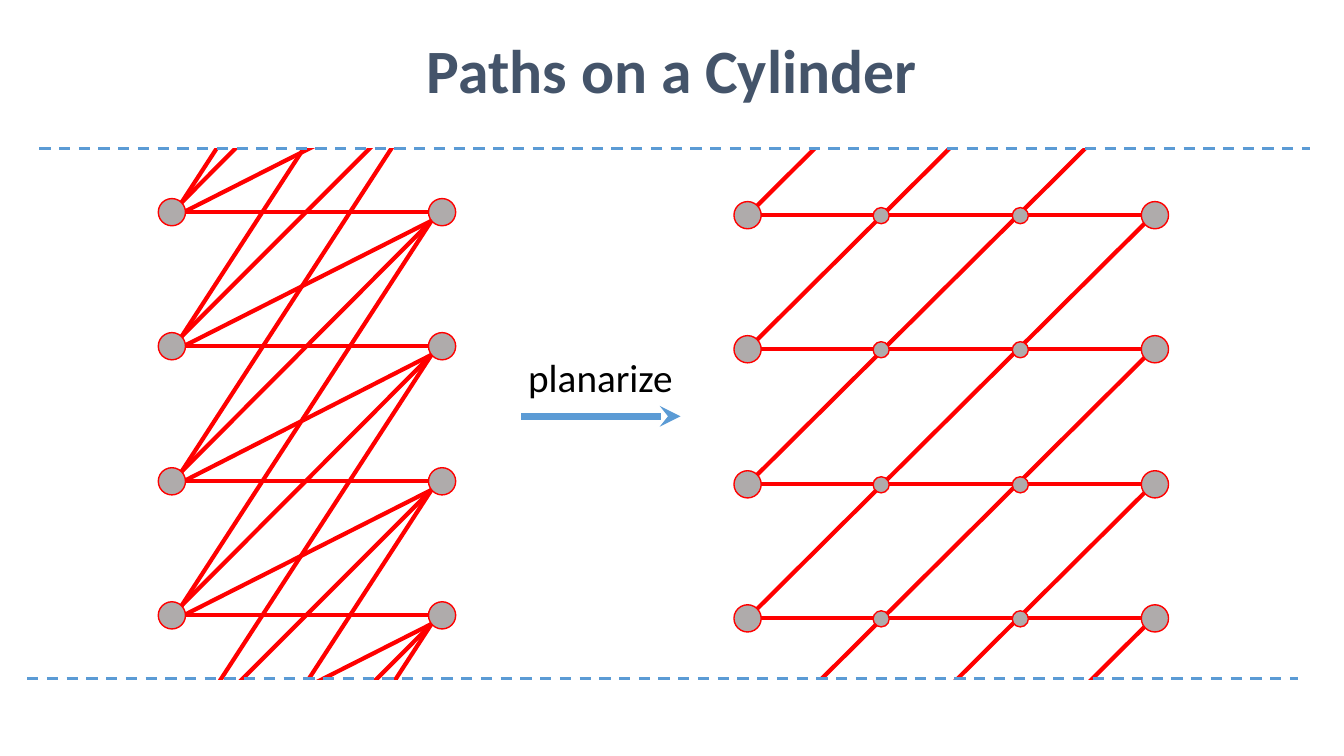
from lxml import etree
from pptx import Presentation
from pptx.dml.color import RGBColor
from pptx.enum.dml import MSO_LINE
from pptx.enum.shapes import MSO_CONNECTOR as CONNECTOR, MSO_SHAPE as SHAPE
from pptx.enum.text import MSO_ANCHOR as ANCHOR, PP_ALIGN as ALIGN
from pptx.oxml.ns import qn
from pptx.util import Emu, Pt

FONT = "Calibri"
RED, GRAY, BLUE, NAVY = "FF0000", "AFABAB", "5B9BD5", "44546A"
WHITE, BLACK = "FFFFFF", "000000"
ROWS = 4
NODE, CROSSING = 27, 16
INSET = 10


def px(length):
    """Turn px, 100 to the inch, into EMU."""
    return Emu(length * 9144)


def color(hex_string):
    return RGBColor.from_string(hex_string)


def add_line(shapes, start, end, line_color, width):
    line = shapes.add_connector(CONNECTOR.STRAIGHT, *map(px, (*start, *end)))
    line.line.color.rgb = color(line_color)
    line.line.width = Pt(width)
    etree.SubElement(line._element.spPr, qn("a:effectLst"))
    return line


def add_filled(shapes, kind, box, fill, outline):
    shape = shapes.add_shape(kind, *map(px, box))
    shape.shadow.inherit = False
    shape.fill.solid()
    shape.fill.fore_color.rgb = color(fill)
    shape.line.color.rgb = color(outline)
    shape.line.width = Pt(1)


def add_node(shapes, x, y, size):
    box = (x - size // 2, y - size // 2, size, size)
    add_filled(shapes, SHAPE.OVAL, box, GRAY, RED)


def add_text(slide, box, text, size, text_color, bold=False, wrap=True):
    frame = slide.shapes.add_textbox(*map(px, box)).text_frame
    frame.word_wrap = wrap
    paragraph = frame.paragraphs[0]
    run = paragraph.add_run()
    run.text = text
    run.font.name = FONT
    run.font.size = Pt(size)
    run.font.bold = bold
    run.font.color.rgb = color(text_color)
    return frame, paragraph


def add_graph(slide, box, steps, crossings=()):
    """Join two columns of nodes; each edge climbs a number of rows and wraps round."""
    left, top, width, height = box
    right = left + width
    shapes = slide.shapes.add_group_shape().shapes

    def row_y(row):
        return top + round(row * height / (ROWS - 1))

    for step in steps:
        # Rows below the last one stand for edges that wrap round the cylinder.
        for row in range(ROWS + step):
            start_y, end_y = row_y(row), row_y(row - step)
            if step == 0:
                start, end = (left, start_y), (right, end_y)
            elif step == 1:
                start, end = (left + NODE // 2, start_y), (right - INSET, end_y + 9)
            else:
                start, end = (left + INSET, start_y - 9), (right - INSET, end_y + 9)
            add_line(shapes, start, end, RED, 3)

    for row in range(ROWS):
        for x in (left, right):
            add_node(shapes, x, row_y(row), NODE)
        for offset in crossings:
            add_node(shapes, left + offset, row_y(row) + 1, CROSSING)


def add_cylinder_edges(slide):
    """Cover the edges beyond the cylinder and draw its two dashed borders."""
    for box in ((15, -50, 1331, 196), (0, 675, 1331, 201)):
        add_filled(slide.shapes, SHAPE.RECTANGLE, box, WHITE, WHITE)
    for x, y in ((27, 673), (39, 147)):
        border = add_line(slide.shapes, (x, y), (x + 1260, y), BLUE, 2)
        border.line.dash_style = MSO_LINE.DASH


def add_title(slide, box):
    frame, paragraph = add_text(slide, box, "Paths on a Cylinder", 44, NAVY, bold=True)
    frame.vertical_anchor = ANCHOR.MIDDLE
    paragraph.alignment = ALIGN.CENTER
    paragraph.line_spacing = 0.9


def add_planarize_arrow(slide, box):
    left, top, width, height = box
    y = top + height + 10
    arrow = add_line(slide.shapes, (left + 3, y), (left + width - 4, y), BLUE, 5)
    etree.SubElement(arrow.line._get_or_add_ln(), qn("a:tailEnd"), type="stealth")
    add_text(slide, box, "planarize", 28, BLACK, wrap=False)


def main():
    presentation = Presentation()
    presentation.slide_width, presentation.slide_height = px(1333), px(750)
    slide = presentation.slides.add_slide(presentation.slide_layouts[6])
    add_graph(slide, (741, 213, 404, 400), steps=(0, 3), crossings=(133, 271))
    add_graph(slide, (170, 210, 268, 400), steps=(0, 1, 2, 3))
    add_cylinder_edges(slide)
    add_title(slide, (0, 0, 1333, 145))
    add_planarize_arrow(slide, (514, 346, 165, 57))
    presentation.save("out.pptx")


if __name__ == "__main__":
    main()
